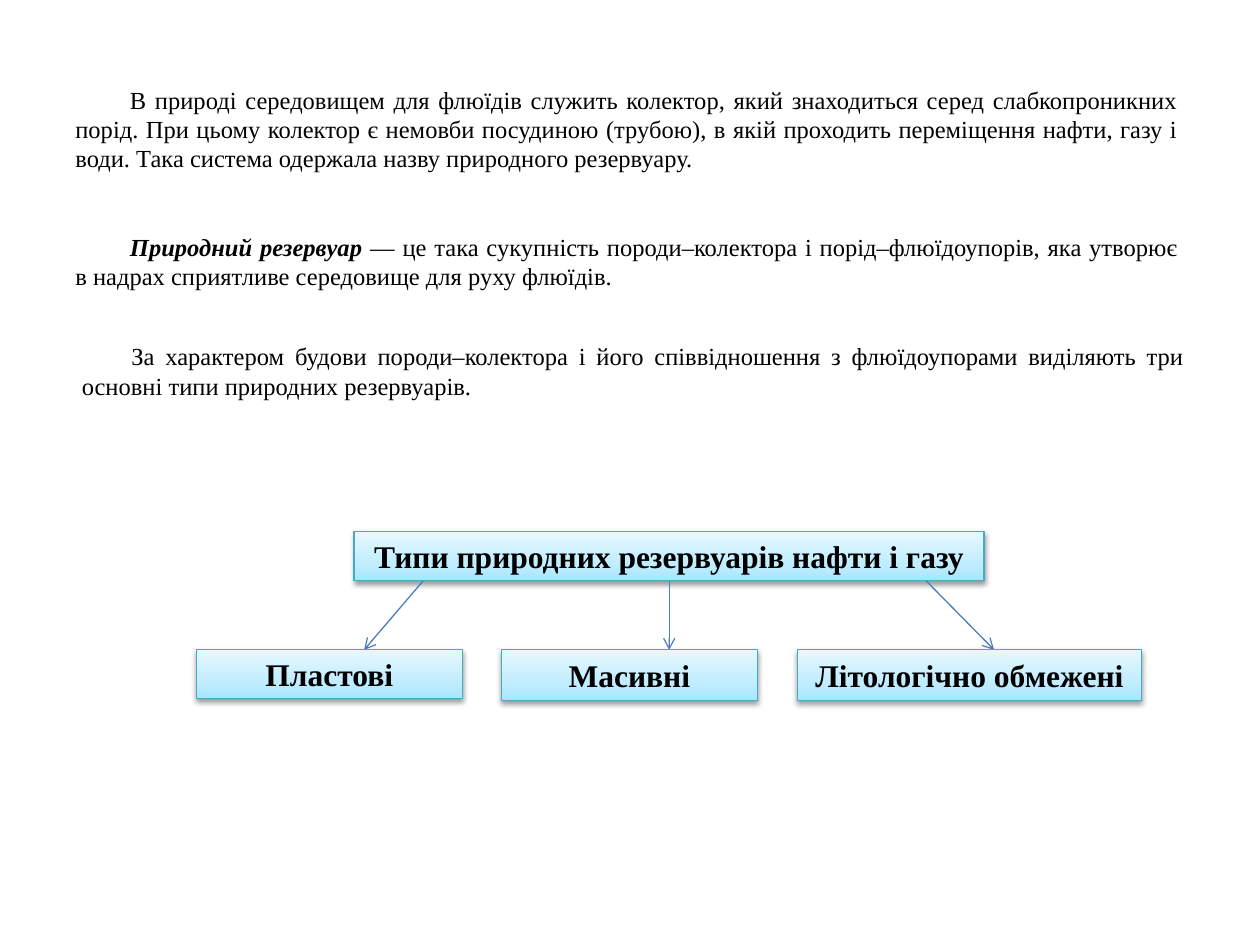
from copy import deepcopy

from lxml.etree import SubElement
from pptx import Presentation
from pptx.dml.color import RGBColor
from pptx.enum.shapes import MSO_CONNECTOR, MSO_SHAPE
from pptx.enum.text import MSO_ANCHOR, PP_ALIGN
from pptx.oxml import parse_xml
from pptx.oxml.ns import nsdecls, qn
from pptx.util import Cm, Pt


def color(hex_code):
    return RGBColor.from_string(hex_code)


class SlideBuilder:
    font_name = "Times New Roman"
    text_color = "000000"
    box_line = "46AAC5"
    arrow_color = "4B7EBC"
    gradient = [(0, "A7E6FF"), (0.35, "C1EDFF"), (1, "E7F8FF")]

    def __init__(self, slide):
        self.slide = slide

    def style(self, paragraph, size, alignment):
        paragraph.alignment = alignment
        paragraph.font.name = self.font_name
        paragraph.font.size = Pt(size)
        paragraph.font.color.rgb = color(self.text_color)

    def text(self, left, top, width, height, paragraphs, indent, gap=0):
        """Add justified paragraphs, each a list of (text, emphasized) runs."""
        shape = self.slide.shapes.add_textbox(Cm(left), Cm(top), Cm(width), Cm(height))
        frame = shape.text_frame
        frame.word_wrap = True
        for index, runs in enumerate(paragraphs):
            paragraph = frame.add_paragraph() if index else frame.paragraphs[0]
            self.style(paragraph, 14, PP_ALIGN.JUSTIFY)
            paragraph.line_spacing = Pt(16.8)
            paragraph.space_before = Pt(gap if index else 0)
            paragraph._p.get_or_add_pPr().set("indent", str(Cm(indent)))
            for text, emphasized in runs:
                run = paragraph.add_run()
                run.text = text
                if emphasized:
                    run.font.bold = run.font.italic = True

    def box(self, left, top, width, height, text):
        shape = self.slide.shapes.add_shape(
            MSO_SHAPE.RECTANGLE, Cm(left), Cm(top), Cm(width), Cm(height))
        self.fill_gradient(shape)
        shape.line.color.rgb = color(self.box_line)
        shape.line.width = Pt(0.75)
        self.add_shadow(shape)
        frame = shape.text_frame
        frame.word_wrap = True
        frame.vertical_anchor = MSO_ANCHOR.MIDDLE
        paragraph = frame.paragraphs[0]
        paragraph.text = text
        self.style(paragraph, 18, PP_ALIGN.CENTER)
        paragraph.font.bold = True
        return shape

    def fill_gradient(self, shape):
        shape.fill.gradient()
        shape.fill.gradient_angle = 90
        stop_list = shape._element.spPr.find(qn("a:gradFill")).find(qn("a:gsLst"))
        stop_list.insert(1, deepcopy(stop_list[0]))
        for stop, (position, hex_code) in zip(shape.fill.gradient_stops, self.gradient):
            stop.position = position
            stop.color.rgb = color(hex_code)

    def add_shadow(self, shape):
        shape._element.spPr.append(parse_xml(
            f'<a:effectLst {nsdecls("a")}>'
            f'<a:outerShdw blurRad="{Pt(3.1)}" dist="{Pt(1.6)}" dir="5400000" rotWithShape="0">'
            '<a:srgbClr val="000000"><a:alpha val="38000"/></a:srgbClr>'
            '</a:outerShdw></a:effectLst>'))

    def arrow(self, start_x, start_y, end_x, end_y):
        connector = self.slide.shapes.add_connector(
            MSO_CONNECTOR.STRAIGHT, Cm(start_x), Cm(start_y), Cm(end_x), Cm(end_y))
        connector.line.color.rgb = color(self.arrow_color)
        connector.line.width = Pt(0.75)
        SubElement(connector.line._get_or_add_ln(), qn("a:tailEnd"), type="arrow")
        SubElement(connector._element.spPr, qn("a:effectLst"))
        return connector


def main():
    presentation = Presentation()
    presentation.slide_width, presentation.slide_height = Cm(25.4), Cm(19.05)
    blank_layout = presentation.slide_layouts[6]
    builder = SlideBuilder(presentation.slides.add_slide(blank_layout))

    builder.text(1.27, 1.58, 22.73, 4.45, [
        [("В природі середовищем для флюїдів служить колектор, який знаходиться серед "
          "слабкопроникних порід. При цьому колектор є немовби посудиною (трубою), в якій "
          "проходить переміщення нафти, газу і води. Така система одержала назву "
          "природного резервуару.", False)],
        [("Природний резервуар ", True),
         ("— це така сукупність породи–колектора і порід–флюїдоупорів, яка утворює "
          "в надрах сприятливе середовище для руху флюїдів.", False)],
    ], indent=1.1, gap=33.6)
    builder.text(1.4, 6.76, 22.73, 2.64, [
        [("За характером будови породи–колектора і його співвідношення з флюїдоупорами "
          "виділяють три основні типи природних резервуарів.", False)],
    ], indent=1)

    header_bottom, types_top = 11.71, 13.1
    header = builder.box(7.14, 10.72, 12.7, 0.99, "Типи природних резервуарів нафти і газу")
    middle_arrow = builder.arrow(13.49, header_bottom, 13.49, types_top)
    middle_arrow.begin_connect(header, 2)
    for start_x, end_x in [(8.53, 7.34), (18.67, 20.04)]:
        builder.arrow(start_x, header_bottom, end_x, types_top)
    for left, width, height, name in [
        (3.96, 5.36, 0.99, "Пластові"),
        (10.11, 5.16, 1.02, "Масивні"),
        (16.08, 6.93, 1.02, "Літологічно обмежені"),
    ]:
        builder.box(left, types_top, width, height, name)

    presentation.save("out.pptx")


if __name__ == "__main__":
    main()
